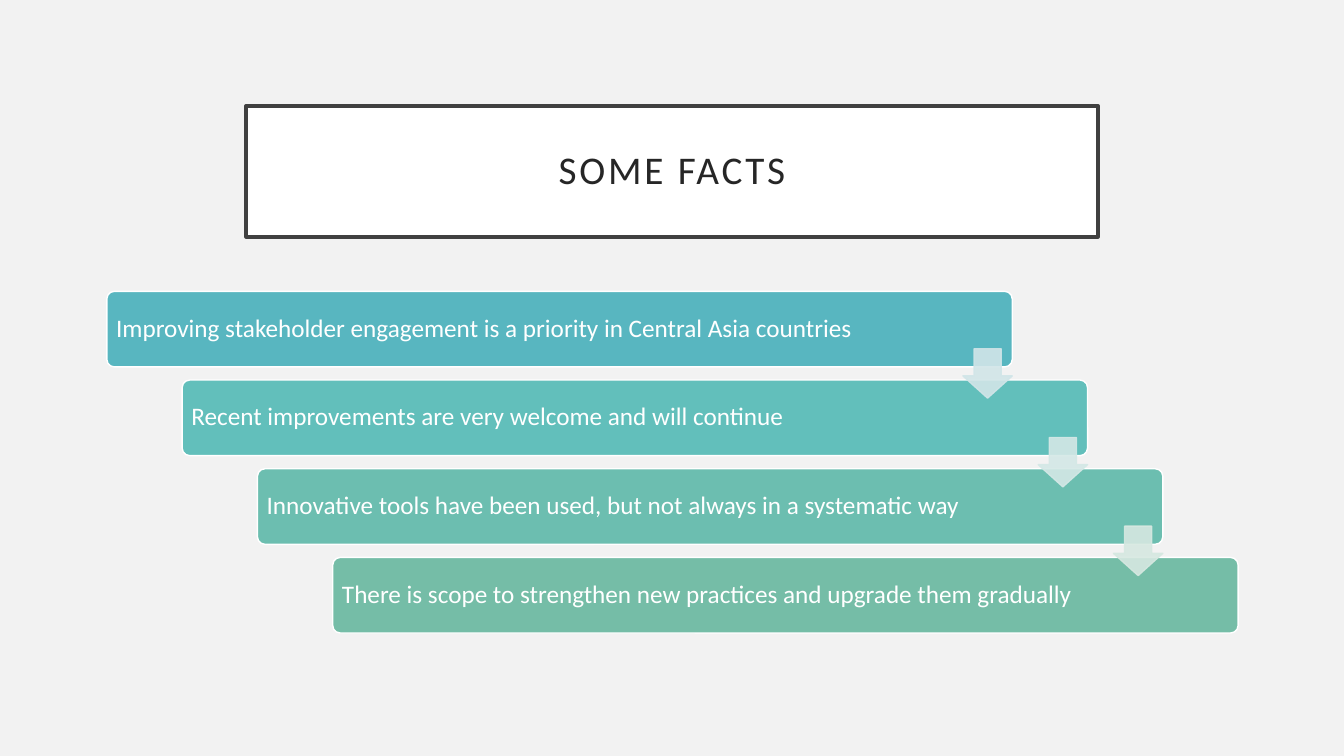
from pptx import Presentation
from pptx import util as u
from pptx.dml.color import RGBColor
from pptx.enum import shapes, text
from pptx.oxml import parse_xml
from pptx.oxml.ns import nsdecls

COLORS = {
    "background": "F2F2F2", "white": "FFFFFF", "frame": "404040", "heading": "262626",
    "fact1": "58B6C0", "fact2": "62BFBB", "fact3": "6CBEB0", "fact4": "75BDA7",
    "arrow1": "D1E5E8", "arrow2": "D4E8E6", "arrow3": "D6E8E1",
}
FACTS = [
    "Improving stakeholder engagement is a priority in Central Asia countries",
    "Recent improvements are very welcome and will continue",
    "Innovative tools have been used, but not always in a systematic way",
    "There is scope to strengthen new practices and upgrade them gradually",
]
BAR_WIDTH, BAR_HEIGHT = 8.98, 0.75
FIRST_LEFT, LAST_LEFT = 1.06, 3.3
FIRST_TOP, TOP_STEP = 2.89, 0.88
ARROW_SIZE, ARROW_DROP = 0.49, 0.57


class FactsSlide:
    font = "Calibri"

    def __init__(self, deck):
        self.slide = deck.slides.add_slide(deck.slide_layouts[6])
        backdrop = self.slide.background.fill
        backdrop.solid()
        backdrop.fore_color.rgb = self.color("background")

    def color(self, name):
        return RGBColor.from_string(COLORS[name])

    def panel(self, preset, box, fill, line, weight, adjustments=()):
        panel = self.slide.shapes.add_shape(preset, *map(u.Inches, box))
        panel.shadow.inherit = False
        panel.fill.solid()
        panel.fill.fore_color.rgb = self.color(fill)
        panel.line.color.rgb = self.color(line)
        panel.line.width = u.Pt(weight)
        for index, value in enumerate(adjustments):
            panel.adjustments[index] = value
        return panel

    def label(self, panel, words, size, color, align, inset, after=0):
        frame = panel.text_frame
        paragraph = frame.paragraphs[0]
        run = paragraph.add_run()
        run.text = words
        margins = dict.fromkeys(
            ("margin_left", "margin_top", "margin_right", "margin_bottom"), u.Inches(inset))
        formats = [
            (frame, {"word_wrap": True, "vertical_anchor": text.MSO_ANCHOR.MIDDLE, **margins}),
            (paragraph, {"alignment": align, "line_spacing": 0.9, "space_after": u.Pt(after)}),
            (run.font, {"name": self.font, "size": u.Pt(size)}),
        ]
        for target, values in formats:
            for key, value in values.items():
                setattr(target, key, value)
        run.font.color.rgb = self.color(color)
        return run

    def title(self, words):
        panel = self.panel(shapes.MSO_SHAPE.RECTANGLE, (2.44, 1.05, 8.45, 1.3),
                           "white", "frame", 2.5)
        run = self.label(panel, words, 28, "heading", text.PP_ALIGN.CENTER, 0.2)
        run.font._element.set("spc", "200")

    def fact(self, words, left, top, fill):
        bar = self.panel(shapes.MSO_SHAPE.ROUNDED_RECTANGLE, (left, top, BAR_WIDTH, BAR_HEIGHT),
                         fill, "white", 1, [0.1])
        self.label(bar, words, 18, "white", text.PP_ALIGN.LEFT, 0.07, 6.3)

    def arrow(self, left, top, fill):
        arrow = self.panel(shapes.MSO_SHAPE.DOWN_ARROW, (left, top, ARROW_SIZE, ARROW_SIZE),
                           fill, fill, 1, [0.55, 0.45])
        for tint in arrow._element.spPr.xpath(".//a:srgbClr"):
            tint.append(parse_xml(f'<a:alpha {nsdecls("a")} val="90000"/>'))


def main():
    deck = Presentation()
    deck.slide_width, deck.slide_height = u.Inches(13.33), u.Inches(7.5)
    page = FactsSlide(deck)
    page.title("SOME FACTS")

    left_step = (LAST_LEFT - FIRST_LEFT) / (len(FACTS) - 1)
    steps = [(FIRST_LEFT + i * left_step, FIRST_TOP + i * TOP_STEP) for i in range(len(FACTS))]
    for number, (words, (left, top)) in enumerate(zip(FACTS, steps), 1):
        page.fact(words, left, top, f"fact{number}")
    for number, (left, top) in enumerate(steps[:-1], 1):
        page.arrow(left + BAR_WIDTH - ARROW_SIZE, top + ARROW_DROP, f"arrow{number}")
    deck.save("out.pptx")


if __name__ == "__main__":
    main()
